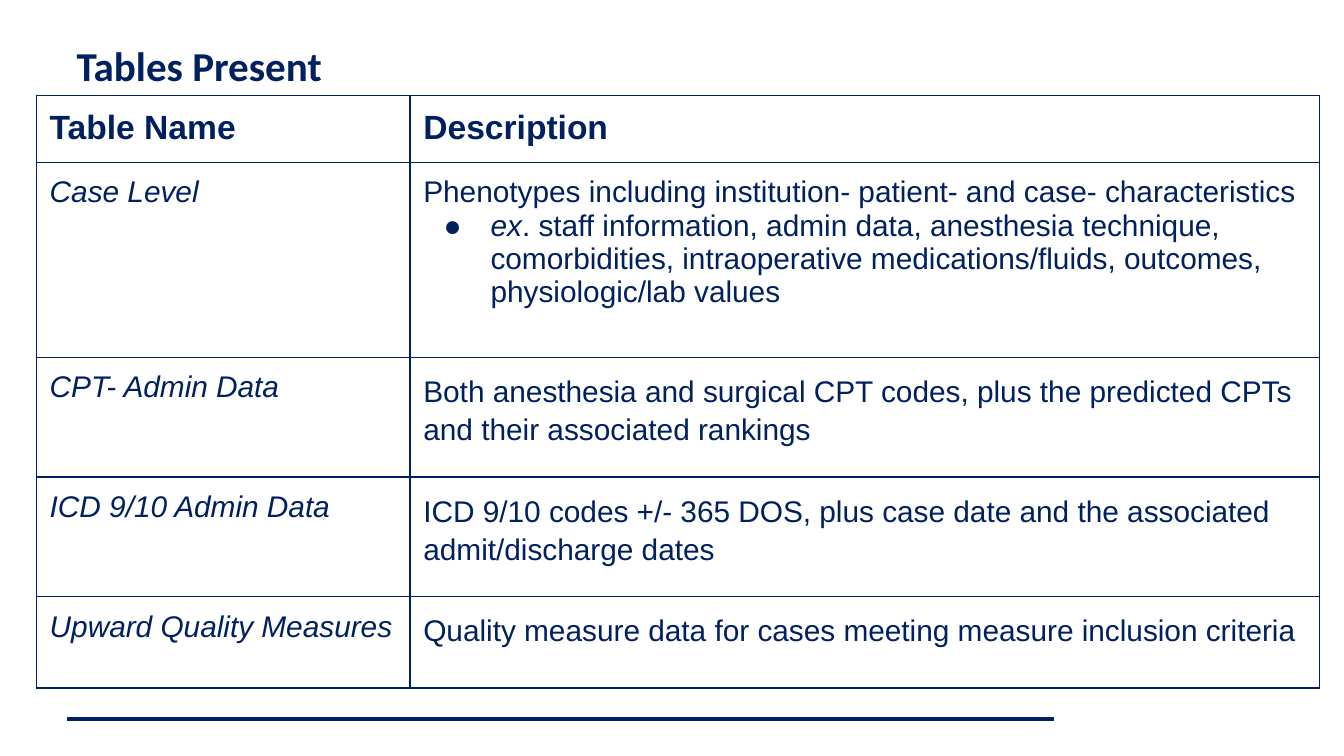
from dataclasses import dataclass

from lxml import etree
from pptx import Presentation
from pptx import util as u
from pptx.dml.color import RGBColor
from pptx.enum import shapes, text
from pptx.oxml import ns

TITLE = "Tables Present"
HEADINGS = ["Table Name", "Description"]
CASE_SUMMARY = "Phenotypes including institution- patient- and case- characteristics"
CASE_EXAMPLE = [
    ("ex", True),
    (". staff information, admin data, anesthesia technique, comorbidities, "
     "intraoperative medications/fluids, outcomes, physiologic/lab values", False),
]
DATA_TABLES = [
    ("CPT- Admin Data",
     "Both anesthesia and surgical CPT codes, plus the predicted CPTs and their associated rankings"),
    ("ICD 9/10 Admin Data",
     "ICD 9/10 codes +/- 365 DOS, plus case date and the associated admit/discharge dates"),
    ("Upward Quality Measures",
     "Quality measure data for cases meeting measure inclusion criteria"),
]
SLIDE_WIDTH = 10
SLIDE_HEIGHT = SLIDE_WIDTH * 9 / 16
COLUMN_WIDTHS = [2.78, 6.77]
ROW_HEIGHTS = [0.47, 1.45, 0.89, 0.89, 0.68]


@dataclass(frozen=True)
class Theme:
    navy: str = "002060"
    title_font: str = "Calibri"
    table_font: str = "Arial"
    title_size: int = 22
    heading_size: int = 18
    body_size: int = 16
    border: float = 0.75
    rule: float = 2
    cell_margin: float = 0.1


THEME = Theme()
NAVY = RGBColor.from_string(THEME.navy)


def add_run(paragraph, words, size, font, bold=False, italic=False):
    run = paragraph.add_run()
    run.text = words
    run.font.size = u.Pt(size)
    run.font.name = font
    run.font.bold = bold
    run.font.italic = italic
    run.font.color.rgb = NAVY


def add_color(parent, tag):
    holder = etree.SubElement(parent, ns.qn(tag))
    etree.SubElement(holder, ns.qn("a:srgbClr"), val=THEME.navy)


def add_bullet(paragraph):
    properties = paragraph._p.get_or_add_pPr()
    properties.set("marL", str(u.Inches(0.5)))
    properties.set("indent", str(u.Inches(-0.35)))
    add_color(properties, "a:buClr")
    etree.SubElement(properties, ns.qn("a:buSzPts"), val=str(THEME.body_size * 100))
    etree.SubElement(properties, ns.qn("a:buFont"), typeface=THEME.table_font)
    etree.SubElement(properties, ns.qn("a:buChar"), char="●")


def format_cell(cell):
    margin = u.Inches(THEME.cell_margin)
    cell.margin_left = cell.margin_right = margin
    cell.margin_top = cell.margin_bottom = margin
    properties = cell._tc.get_or_add_tcPr()
    for side in ("a:lnL", "a:lnR", "a:lnT", "a:lnB"):
        edge = etree.SubElement(properties, ns.qn(side), w=str(u.Pt(THEME.border)))
        add_color(edge, "a:solidFill")
    cell.fill.background()


def fill_cell(cell, words, size=THEME.body_size, spacing=None, **style):
    paragraph = cell.text_frame.paragraphs[0]
    if spacing:
        paragraph.line_spacing = spacing
    add_run(paragraph, words, size, THEME.table_font, **style)


def add_title(slide):
    title = slide.shapes.title
    title.left, title.top = u.Inches(0.5), u.Inches(0.18)
    title.width, title.height = u.Inches(9), u.Inches(0.53)
    frame = title.text_frame
    frame.word_wrap = True
    frame.auto_size = text.MSO_AUTO_SIZE.SHAPE_TO_FIT_TEXT
    frame.vertical_anchor = text.MSO_ANCHOR.BOTTOM
    frame.margin_left = frame.margin_right = u.Inches(0.07)
    frame.margin_top = frame.margin_bottom = u.Inches(0.04)
    heading = frame.paragraphs[0]
    heading.alignment = text.PP_ALIGN.LEFT
    add_run(heading, TITLE, THEME.title_size, THEME.title_font, bold=True)


def add_rule(slide):
    rule = slide.shapes.add_connector(
        shapes.MSO_CONNECTOR.STRAIGHT,
        u.Inches(0.5), u.Inches(5.35), u.Inches(7.84), u.Inches(5.35))
    rule.line.color.rgb = NAVY
    rule.line.width = u.Pt(THEME.rule)
    etree.SubElement(rule._element.spPr, ns.qn("a:effectLst"))


def add_descriptions(slide):
    descriptions = slide.shapes.add_table(
        len(ROW_HEIGHTS), len(COLUMN_WIDTHS), u.Inches(0.27), u.Inches(0.71),
        u.Inches(sum(COLUMN_WIDTHS)), u.Inches(sum(ROW_HEIGHTS))).table
    descriptions.horz_banding = False
    descriptions.first_row = False
    for column, width in zip(descriptions.columns, COLUMN_WIDTHS):
        column.width = u.Inches(width)
    for row, height in zip(descriptions.rows, ROW_HEIGHTS):
        row.height = u.Inches(height)
    for cell in descriptions.iter_cells():
        format_cell(cell)

    for index, heading in enumerate(HEADINGS):
        fill_cell(descriptions.cell(0, index), heading, THEME.heading_size, bold=True)

    case_description = descriptions.cell(1, 1)
    fill_cell(descriptions.cell(1, 0), "Case Level", italic=True)
    fill_cell(case_description, CASE_SUMMARY)
    example = case_description.text_frame.add_paragraph()
    add_bullet(example)
    for words, italic in CASE_EXAMPLE:
        add_run(example, words, THEME.body_size, THEME.table_font, italic=italic)

    for index, (name, description) in enumerate(DATA_TABLES, start=2):
        fill_cell(descriptions.cell(index, 0), name, italic=True)
        fill_cell(descriptions.cell(index, 1), description, spacing=1.15)


def main():
    deck = Presentation()
    deck.slide_width = u.Inches(SLIDE_WIDTH)
    deck.slide_height = u.Inches(SLIDE_HEIGHT)
    slide = deck.slides.add_slide(deck.slide_layouts.get_by_name("Title Only"))
    add_rule(slide)
    add_title(slide)
    add_descriptions(slide)
    deck.save("out.pptx")


if __name__ == "__main__":
    main()
